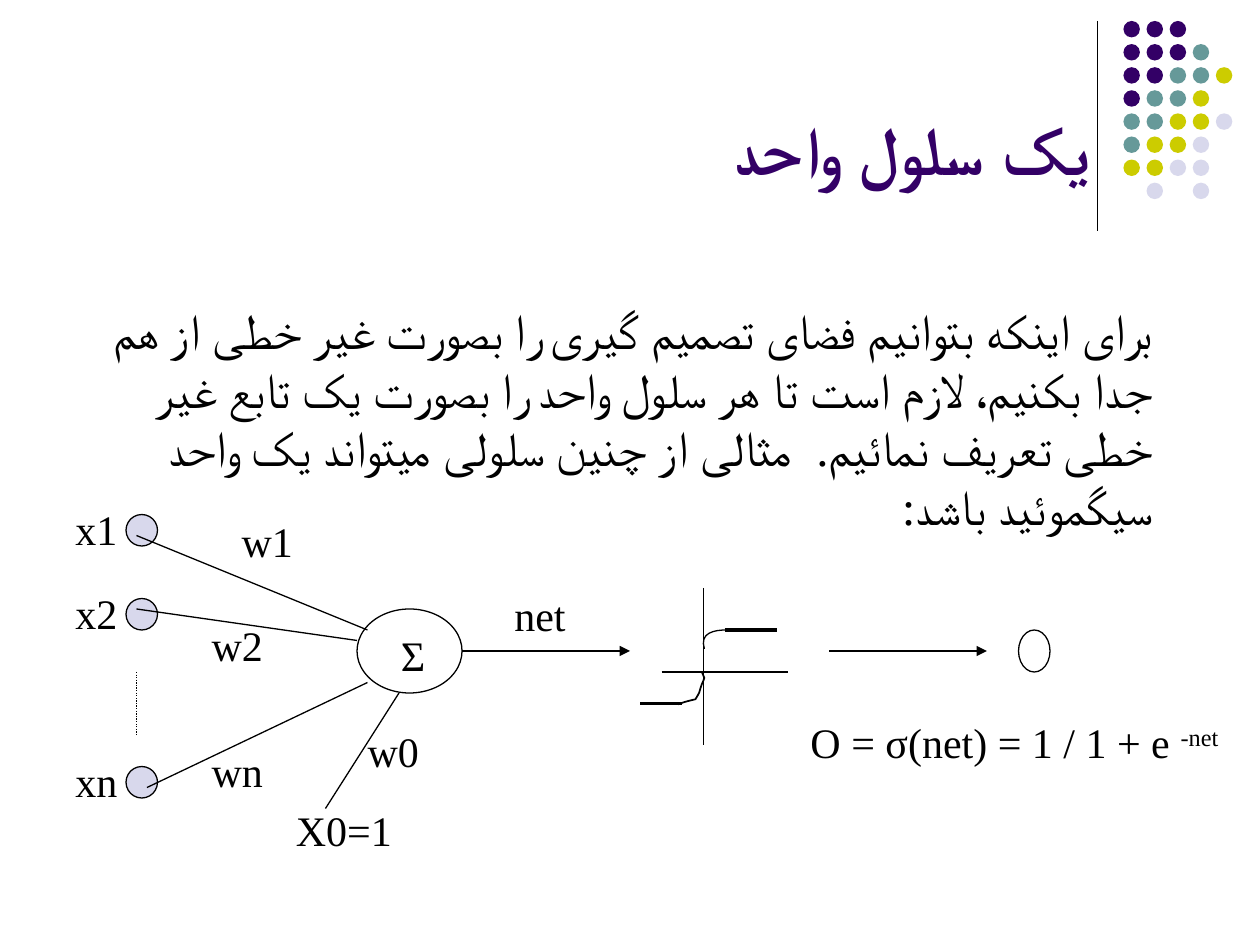
from lxml import etree
from pptx import Presentation
from pptx.dml.color import RGBColor
from pptx.enum.dml import MSO_LINE
from pptx.enum.shapes import MSO_CONNECTOR, MSO_SHAPE
from pptx.enum.text import MSO_ANCHOR, MSO_AUTO_SIZE, PP_ALIGN
from pptx.oxml.ns import qn
from pptx.util import Pt

STRAIGHT = MSO_CONNECTOR.STRAIGHT
OVAL = MSO_SHAPE.OVAL
DOTTED = MSO_LINE.ROUND_DOT
RIGHT = PP_ALIGN.RIGHT
TOP, BOTTOM = MSO_ANCHOR.TOP, MSO_ANCHOR.BOTTOM
FIXED, FIT_TEXT = MSO_AUTO_SIZE.NONE, MSO_AUTO_SIZE.SHAPE_TO_FIT_TEXT
LATIN_FONT = "Times New Roman"
TITLE_FONT = "Arial"

COLORS = {
    "ink": "000000",
    "purple": "330066",
    "teal": "669999",
    "olive": "CCCC00",
    "lavender": "D8D8EC",
}

DOT_COLORS = {"P": "purple", "T": "teal", "Y": "olive", "L": "lavender"}
DOT_ROWS = ["PPP", "PPPT", "PPTTY", "PTTY", "TTYYL", "TYYL", "YYLL", ".L.L"]
DOT_PITCH, DOT_SIZE = 13.2, 9.4

TITLE = "یک سلول واحد"
EXPLANATION = (
    "برای اینکه بتوانیم فضای تصمیم گیری را بصورت غیر خطی از هم جدا بکنیم، "
    "لازم است تا هر سلول واحد را بصورت یک تابع غیر خطی تعریف نمائیم.  "
    "مثالی از چنین سلولی میتواند یک واحد سیگموئید باشد:"
)

# name, circle top, label top, start and end of the link to the sum
INPUTS = [
    ("x1", 294, 284.4, (78, 306), (210, 360)),
    ("x2", 342, 332, (78, 348), (204, 366)),
    ("xn", 438, 428.4, (84, 450), (210, 390)),
]
# text, left, top, width
LABELS = [
    ("w1", 131, 291.2, 44),
    ("w2", 113.8, 350.2, 44),
    ("wn", 113.8, 422.2, 44),
    ("w0", 203, 411, 44),
    ("X0=1", 162, 456.2, 70),
    ("Σ", 222, 356.4, 29),
    ("net", 286.8, 333.4, 44),
]
# Bezier segments: two control points and an end point each
LOWER_BEND = [
    [(391, 401), (394.6, 400.3), (397.4, 399.6)],
    [(400.3, 394.6), (398.9, 397.4), (401, 391)],
    [(401.8, 389.5), (402.5, 387.4), (402.5, 387.4)],
    [(401.8, 385.9), (401, 383.8), (401, 383.8)],
]
UPPER_BEND = [[(399.6, 361.4), (408.2, 360), (415.4, 360)]]


def rgb(name):
    return RGBColor.from_string(COLORS[name])


def write_text(frame, *parts, size=24, font=LATIN_FONT, color="ink", bold=False,
               rtl=False, anchor=TOP, before=0):
    """Fill the frame; any part after the first is superscript."""
    frame.vertical_anchor = anchor
    paragraph = frame.paragraphs[0]
    paragraph.space_before = Pt(before)
    if rtl:
        paragraph.alignment = RIGHT
        paragraph._p.get_or_add_pPr().set("rtl", "1")
    for index, part in enumerate(parts):
        run = paragraph.add_run()
        run.text = part
        run.font.size = Pt(size)
        run.font.name = font
        run.font.bold = bold
        run.font.color.rgb = rgb(color)
        properties = run._r.get_or_add_rPr()
        etree.SubElement(properties, qn("a:cs")).set("typeface", font)
        if index:
            properties.set("baseline", "30000")


def add_text(slide, left, top, width, height, *parts, wrap=False, **text_format):
    frame = slide.shapes.add_textbox(Pt(left), Pt(top), Pt(width), Pt(height)).text_frame
    frame.word_wrap = wrap
    frame.auto_size = FIXED if wrap else FIT_TEXT
    write_text(frame, *parts, **text_format)


def add_line(slide, start, end, weight=0.75, dash=None, arrow=False):
    line = slide.shapes.add_connector(STRAIGHT, *map(Pt, (*start, *end)))
    line.line.color.rgb = rgb("ink")
    line.line.width = Pt(weight)
    if dash:
        line.line.dash_style = dash
    if arrow:
        etree.SubElement(line.line._get_or_add_ln(), qn("a:tailEnd")).set("type", "triangle")
    etree.SubElement(line._element.spPr, qn("a:effectLst"))


def add_oval(slide, left, top, width, height, fill=None, outlined=True):
    oval = slide.shapes.add_shape(OVAL, Pt(left), Pt(top), Pt(width), Pt(height))
    oval.shadow.inherit = False
    if fill:
        oval.fill.solid()
        oval.fill.fore_color.rgb = rgb(fill)
    else:
        oval.fill.background()
    if outlined:
        oval.line.color.rgb = rgb("ink")
        oval.line.width = Pt(0.75)
    else:
        oval.line.fill.background()


def add_curve(slide, start, segments, weight, steps=8):
    """Draw Bezier segments as a fine open polyline."""
    points = []
    p0 = start
    for p1, p2, p3 in segments:
        for step in range(1, steps + 1):
            t = step / steps
            u = 1 - t
            points.append(tuple(
                Pt(u**3 * a + 3 * u * u * t * b + 3 * u * t * t * c + t**3 * d)
                for a, b, c, d in zip(p0, p1, p2, p3)
            ))
        p0 = p3
    builder = slide.shapes.build_freeform(Pt(start[0]), Pt(start[1]))
    builder.add_line_segments(points, close=False)
    curve = builder.convert_to_shape()
    curve.shadow.inherit = False
    curve.fill.background()
    curve.line.color.rgb = rgb("ink")
    curve.line.width = Pt(weight)


def add_corner_dots(slide):
    add_line(slide, (627, 12), (627, 132))
    for row, codes in enumerate(DOT_ROWS):
        for column, code in enumerate(codes):
            if code in DOT_COLORS:
                add_oval(slide, 642 + column * DOT_PITCH, 12 + row * DOT_PITCH,
                         DOT_SIZE, DOT_SIZE, DOT_COLORS[code], outlined=False)


def add_title(slide):
    title = slide.shapes.title
    title.left, title.top, title.width, title.height = map(Pt, (36, 9.6, 594, 102))
    write_text(title.text_frame, TITLE, size=39, font=TITLE_FONT, color="purple",
               bold=True, rtl=True, anchor=BOTTOM)


def add_neuron(slide):
    for name, circle_top, label_top, start, end in INPUTS:
        add_oval(slide, 72, circle_top, 18, 18, "lavender")
        add_text(slide, 36, label_top, 39, 36, name)
        add_line(slide, start, end)
    add_line(slide, (78, 384), (78, 420), dash=DOTTED)
    add_oval(slide, 204, 348, 60, 48)
    add_line(slide, (186, 462), (228, 396))
    add_line(slide, (264, 372), (360, 372), arrow=True)
    for label, left, top, width in LABELS:
        add_text(slide, left, top, width, 36, label)


def add_sigmoid(slide):
    add_line(slide, (378, 384), (450, 384))
    add_line(slide, (402, 336), (402, 426))
    add_line(slide, (366, 402), (390, 402), weight=2.25)
    add_line(slide, (414, 360), (444, 360), weight=2.25)
    add_curve(slide, (387.4, 402.5), LOWER_BEND, weight=1)
    add_curve(slide, (402.5, 370.8), UPPER_BEND, weight=0.75)


def add_output(slide):
    add_line(slide, (474, 372), (564, 372), arrow=True)
    add_oval(slide, 582, 360, 18, 24)
    add_text(slide, 456, 406, 250.5, 36, "O = σ(net) = 1 / 1 + e ", "-net")


def main():
    deck = Presentation()
    deck.slide_width, deck.slide_height = Pt(720), Pt(540)
    slide = deck.slides.add_slide(deck.slide_layouts[5])
    add_corner_dots(slide)
    add_title(slide)
    add_neuron(slide)
    add_sigmoid(slide)
    add_output(slide)
    add_text(slide, 30, 168, 636, 108, EXPLANATION, wrap=True, size=28, rtl=True, before=5.6)
    deck.save("out.pptx")


if __name__ == "__main__":
    main()
